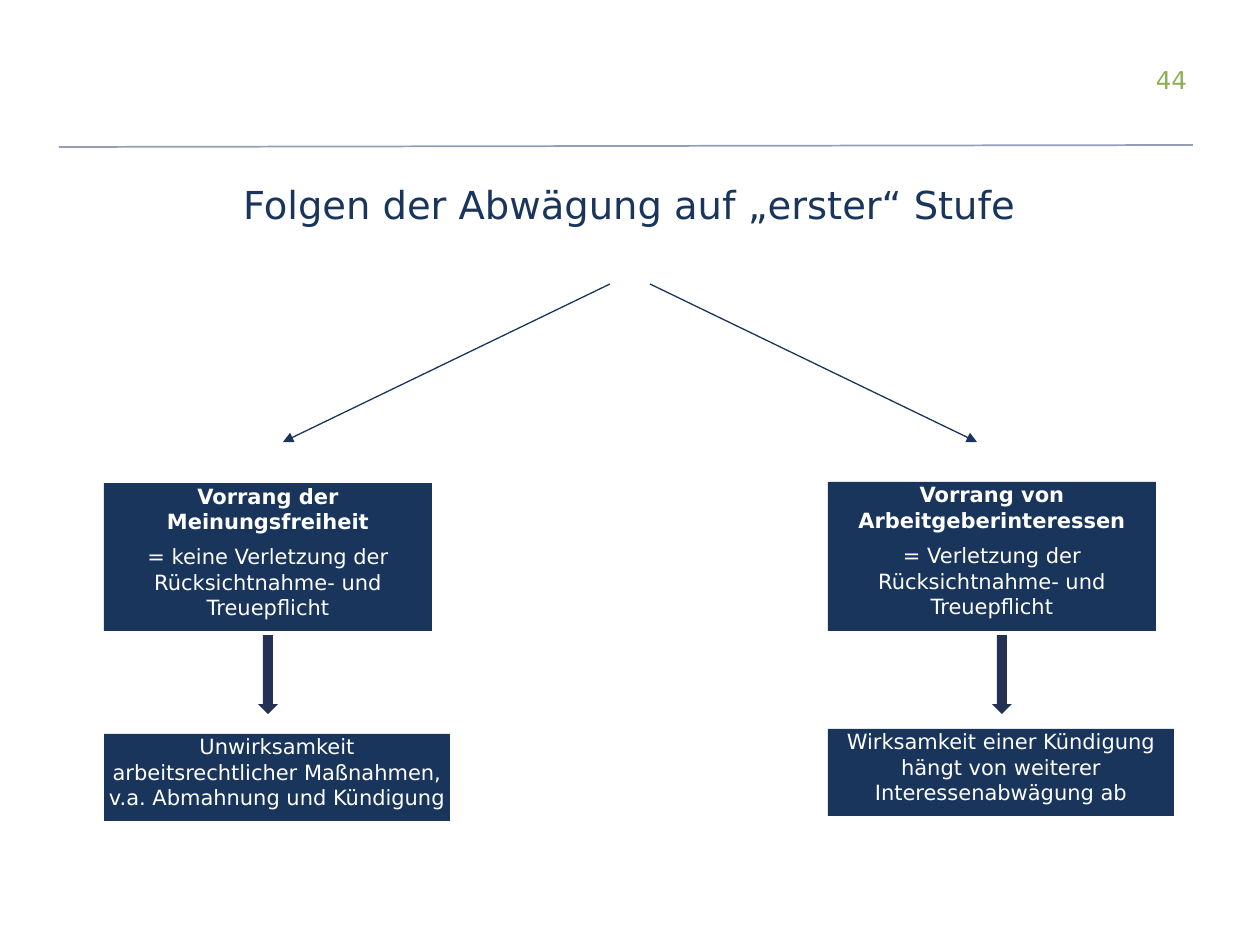
from dataclasses import dataclass

from lxml import etree
from pptx import Presentation
from pptx.dml.color import RGBColor
from pptx.enum import shapes, text
from pptx.oxml.ns import qn
from pptx.util import Emu, Pt

EMU_PER_PX = 914400 / 126
FONT = "DejaVu Sans"
NAVY, DARK_NAVY, GREY_BLUE = "19355C", "233254", "949EB7"
GREEN, WHITE = "8DB053", "FFFFFF"


@dataclass(frozen=True)
class Area:
    left: int
    top: int
    width: int
    height: int


@dataclass(frozen=True)
class Line:
    start: tuple[int, int]
    end: tuple[int, int]
    color: str
    points: float
    arrow: bool = False


@dataclass(frozen=True)
class Span:
    wording: str
    size: int = 12
    color: str = WHITE
    bold: bool = False


@dataclass(frozen=True)
class Branch:
    priority_area: Area
    priority: str
    meaning: str
    arrow_area: Area
    result_area: Area
    result: str


LINES = [
    Line((59, 147), (1193, 145), GREY_BLUE, 1),
    Line((610, 284), (283, 442), NAVY, 0.75, arrow=True),
    Line((650, 284), (977, 442), NAVY, 0.75, arrow=True),
]

BRANCHES = [
    Branch(
        Area(104, 483, 328, 148),
        "Vorrang der Meinungsfreiheit",
        "= keine Verletzung der Rücksichtnahme- und Treuepflicht",
        Area(258, 635, 20, 79),
        Area(104, 734, 346, 87),
        "Unwirksamkeit arbeitsrechtlicher Maßnahmen, v.a. Abmahnung und Kündigung",
    ),
    Branch(
        Area(828, 482, 328, 149),
        "Vorrang von Arbeitgeberinteressen",
        "= Verletzung der Rücksichtnahme- und Treuepflicht",
        Area(992, 635, 20, 79),
        Area(828, 729, 346, 87),
        "Wirksamkeit einer Kündigung hängt von weiterer Interessenabwägung ab",
    ),
]


def px(length: int) -> Emu:
    return Emu(round(length * EMU_PER_PX))


def rgb(color: str) -> RGBColor:
    return RGBColor.from_string(color)


def bounds(area: Area) -> tuple[Emu, Emu, Emu, Emu]:
    return px(area.left), px(area.top), px(area.width), px(area.height)


def write(box, spans: list[Span], align, anchor, inset_x: int = 0, inset_y: int = 0) -> None:
    """Fill the box with one paragraph per span."""
    frame = box.text_frame
    frame.word_wrap = True
    frame.vertical_anchor = anchor
    frame.margin_left = frame.margin_right = px(inset_x)
    frame.margin_top = frame.margin_bottom = px(inset_y)
    for index, span in enumerate(spans):
        para = frame.add_paragraph() if index else frame.paragraphs[0]
        para.alignment = align
        if index:
            para.space_before = Pt(6)
        run = para.add_run()
        run.text = span.wording
        run.font.name = FONT
        run.font.size = Pt(span.size)
        run.font.bold = span.bold
        run.font.color.rgb = rgb(span.color)


def add_filled(page, kind, area: Area, color: str):
    shape = page.shapes.add_shape(kind, *bounds(area))
    shape.shadow.inherit = False
    shape.fill.solid()
    shape.fill.fore_color.rgb = rgb(color)
    shape.line.fill.background()
    return shape


def add_line(page, line: Line) -> None:
    ends = [px(value) for value in (*line.start, *line.end)]
    connector = page.shapes.add_connector(shapes.MSO_CONNECTOR.STRAIGHT, *ends)
    connector.line.color.rgb = rgb(line.color)
    connector.line.width = Pt(line.points)
    if line.arrow:
        outline = connector.line._get_or_add_ln()
        etree.SubElement(outline, qn("a:tailEnd"), type="triangle")
    etree.SubElement(connector._element.spPr, qn("a:effectLst"))


def add_branch(page, branch: Branch) -> None:
    rectangle = shapes.MSO_SHAPE.RECTANGLE
    center, top = text.PP_ALIGN.CENTER, text.MSO_ANCHOR.TOP
    priority_box = add_filled(page, rectangle, branch.priority_area, NAVY)
    write(priority_box, [Span(branch.priority, bold=True), Span(branch.meaning)], center, top)
    add_filled(page, shapes.MSO_SHAPE.DOWN_ARROW, branch.arrow_area, DARK_NAVY)
    result_box = add_filled(page, rectangle, branch.result_area, NAVY)
    write(result_box, [Span(branch.result)], center, top)


def main() -> None:
    deck = Presentation()
    deck.slide_width, deck.slide_height = px(1260), px(945)
    page = deck.slides.add_slide(deck.slide_layouts[6])

    number_box = page.shapes.add_textbox(*bounds(Area(903, 59, 297, 35)))
    write(number_box, [Span("44", 14, GREEN)],
          text.PP_ALIGN.RIGHT, text.MSO_ANCHOR.BOTTOM, inset_x=13)
    title_box = page.shapes.add_textbox(*bounds(Area(49, 165, 1160, 79)))
    write(title_box, [Span("Folgen der Abwägung auf „erster“ Stufe", 22, NAVY)],
          text.PP_ALIGN.CENTER, text.MSO_ANCHOR.MIDDLE, inset_x=13, inset_y=6)

    for line in LINES:
        add_line(page, line)
    for branch in BRANCHES:
        add_branch(page, branch)
    deck.save("out.pptx")


if __name__ == "__main__":
    main()
